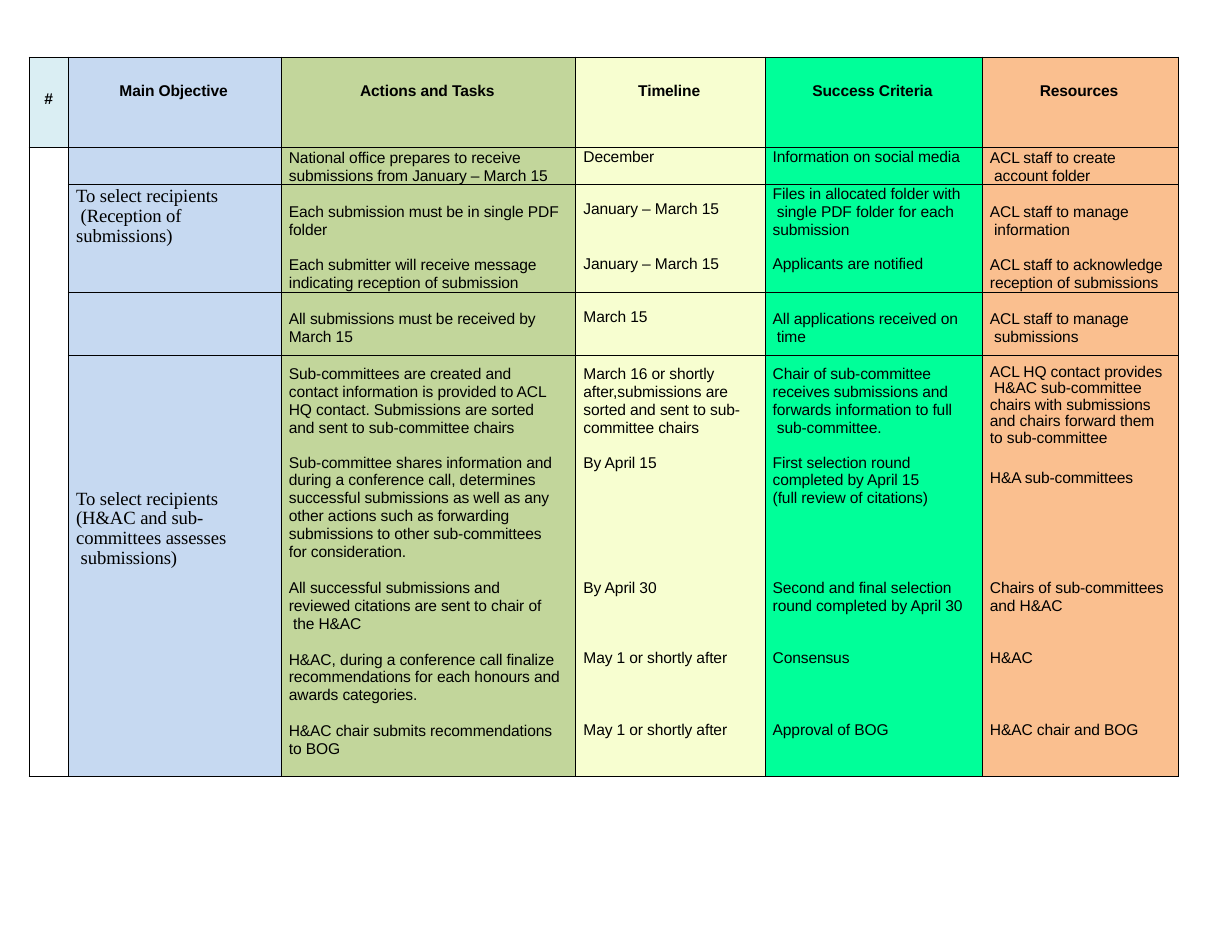
"""Build the awards selection work plan as a single table slide."""
from lxml import etree
from pptx import Presentation
from pptx import util as u
from pptx.dml.color import RGBColor
from pptx.enum import text
from pptx.oxml import ns

BLACK = RGBColor(0x00, 0x00, 0x00)
WHITE = RGBColor(0xFF, 0xFF, 0xFF)
COLUMN_FILLS = [
    WHITE,
    RGBColor(0xC6, 0xD9, 0xF1),
    RGBColor(0xC2, 0xD6, 0x9B),
    RGBColor(0xF7, 0xFE, 0xD0),
    RGBColor(0x00, 0xFF, 0x99),
    RGBColor(0xFA, 0xBF, 0x8F),
]
NUMBER_FILL = RGBColor(0xDA, 0xEE, 0xF3)

COLUMN_WIDTHS = [0.35, 1.9, 2.63, 1.69, 1.94, 1.75]
ROW_HEIGHTS = [0.81, 0.33, 0.62, 0.34, 0.56, 0.88, 1.11, 0.57, 0.64, 0.56]
GROUP_ENDS = {0, 1, 3, 4, 9}

HEADERS = ["#", "Main Objective", "Actions and Tasks", "Timeline", "Success Criteria", "Resources"]
BODY = [
    ["",
     "National office prepares to receive\nsubmissions from January – March 15",
     "December",
     "Information on social media",
     "ACL staff to create\n account folder"],
    ["To select recipients\n (Reception of\nsubmissions)",
     "Each submission must be in single PDF\nfolder",
     "January – March 15",
     "Files in allocated folder with\n single PDF folder for each\nsubmission",
     "ACL staff to manage\n information"],
    ["",
     "Each submitter will receive message\nindicating reception of submission",
     "January – March 15",
     "Applicants are notified",
     "ACL staff to acknowledge\nreception of submissions"],
    ["",
     "All submissions must be received by\nMarch 15",
     "March 15",
     "All applications received on\n time",
     "ACL staff to manage\n submissions"],
    ["",
     "Sub-committees are created and\ncontact information is provided to ACL\n"
     "HQ contact. Submissions are sorted\nand sent to sub-committee chairs",
     "March 16 or shortly\nafter,submissions are\nsorted and sent to sub-\ncommittee chairs",
     "Chair of sub-committee\nreceives submissions and\nforwards information to full\n sub-committee.",
     "ACL HQ contact provides\n H&AC sub-committee\nchairs with submissions\n"
     "and chairs forward them\nto sub-committee"],
    ["To select recipients\n(H&AC and sub-\ncommittees assesses\n submissions)",
     "Sub-committee shares information and\nduring a conference call, determines\n"
     "successful submissions as well as any\nother actions such as forwarding\n"
     "submissions to other sub-committees\nfor consideration.",
     "By April 15",
     "First selection round\ncompleted by April 15\n(full review of citations)",
     "H&A sub-committees"],
    ["",
     "All successful submissions and\nreviewed citations are sent to chair of\n the H&AC",
     "By April 30",
     "Second and final selection\nround completed by April 30",
     "Chairs of sub-committees\nand H&AC"],
    ["",
     "H&AC, during a conference call finalize\nrecommendations for each honours and\nawards categories.",
     "May 1 or shortly after",
     "Consensus",
     "H&AC"],
    ["",
     "H&AC chair submits recommendations\nto BOG",
     "May 1 or shortly after",
     "Approval of BOG",
     "H&AC chair and BOG"],
]
TOP_MARGINS = [
    [0.3, 0.23, 0.23, 0.23, 0.23, 0.23],
    [0, 0, 0.01, 0, 0, 0.01],
    [0, 0.02, 0.16, 0.14, 0, 0.16],
    [0, 0, 0.02, 0.01, 0.01, 0.02],
    [0, 0, 0.16, 0.14, 0.16, 0.16],
    [0, 0, 0.09, 0.09, 0.09, 0.08],
    [0, 0.32, 0, 0, 0, 0.14],
    [0, 0, 0.01, 0.01, 0.01, 0.01],
    [0, 0, 0.08, 0.07, 0.07, 0.07],
    [0, 0, 0.08, 0.07, 0.07, 0.07],
]


def write_lines(cell, content, font_name, size, bold):
    paragraph = cell.text_frame.paragraphs[0]
    paragraph.font.size = u.Pt(size)
    for index, line in enumerate(content.split("\n") if content else []):
        if index:
            paragraph.add_line_break()
        run = paragraph.add_run()
        run.text = line
        run.font.name = font_name
        run.font.size = u.Pt(size)
        run.font.bold = bold
        run.font.color.rgb = BLACK
        run.font._element.set("spc", "-5")
    return paragraph


def set_borders(cell, sides):
    properties = cell._tc.get_or_add_tcPr()
    for position, side in enumerate(("L", "R", "T", "B")):
        line = etree.Element(ns.qn(f"a:ln{side}"), w=str(u.Pt(0.5)))
        if side in sides:
            fill = etree.SubElement(line, ns.qn("a:solidFill"))
            etree.SubElement(fill, ns.qn("a:srgbClr"), val=str(BLACK))
        else:
            etree.SubElement(line, ns.qn("a:noFill"))
        properties.insert(position, line)


presentation = Presentation()
presentation.slide_width = u.Inches(11)
presentation.slide_height = u.Inches(8.5)
slide = presentation.slides.add_slide(presentation.slide_layouts[6])

table = slide.shapes.add_table(
    len(ROW_HEIGHTS), len(COLUMN_WIDTHS), u.Inches(0.26), u.Inches(0.51),
    u.Inches(sum(COLUMN_WIDTHS)), u.Inches(sum(ROW_HEIGHTS))).table
table.first_row = False
table.horz_banding = False
for column, width in zip(table.columns, COLUMN_WIDTHS):
    column.width = u.Inches(width)
for row, height in zip(table.rows, ROW_HEIGHTS):
    row.height = u.Inches(height)

rows = [HEADERS] + [["", *contents] for contents in BODY]
for row_index, contents in enumerate(rows):
    for column_index, content in enumerate(contents):
        cell = table.cell(row_index, column_index)
        is_header = row_index == 0
        is_objective = column_index == 1 and content and not is_header
        cell.margin_left = u.Inches(0 if is_header else 0.07)
        cell.margin_right = u.Inches(0.02 if is_header and column_index else 0)
        cell.margin_top = u.Inches(TOP_MARGINS[row_index][column_index])
        cell.margin_bottom = 0
        cell.fill.solid()
        cell.fill.fore_color.rgb = NUMBER_FILL if is_header and not column_index else COLUMN_FILLS[column_index]

        font_name, size = ("Times New Roman", 12) if is_objective else ("Arial", 10)
        paragraph = write_lines(cell, content, font_name, size, is_header)
        if is_header:
            paragraph.alignment = text.PP_ALIGN.CENTER
        elif is_objective or (row_index, column_index) == (5, 5):
            paragraph.line_spacing = 0.95
        else:
            paragraph.line_spacing = u.Pt(11.5)

        sides = "LR"
        if is_header or row_index - 1 in GROUP_ENDS:
            sides += "T"
        if row_index in GROUP_ENDS:
            sides += "B"
        set_borders(cell, "LRTB" if column_index == 0 else sides)

table.cell(1, 0).merge(table.cell(len(rows) - 1, 0))

presentation.save("out.pptx")
